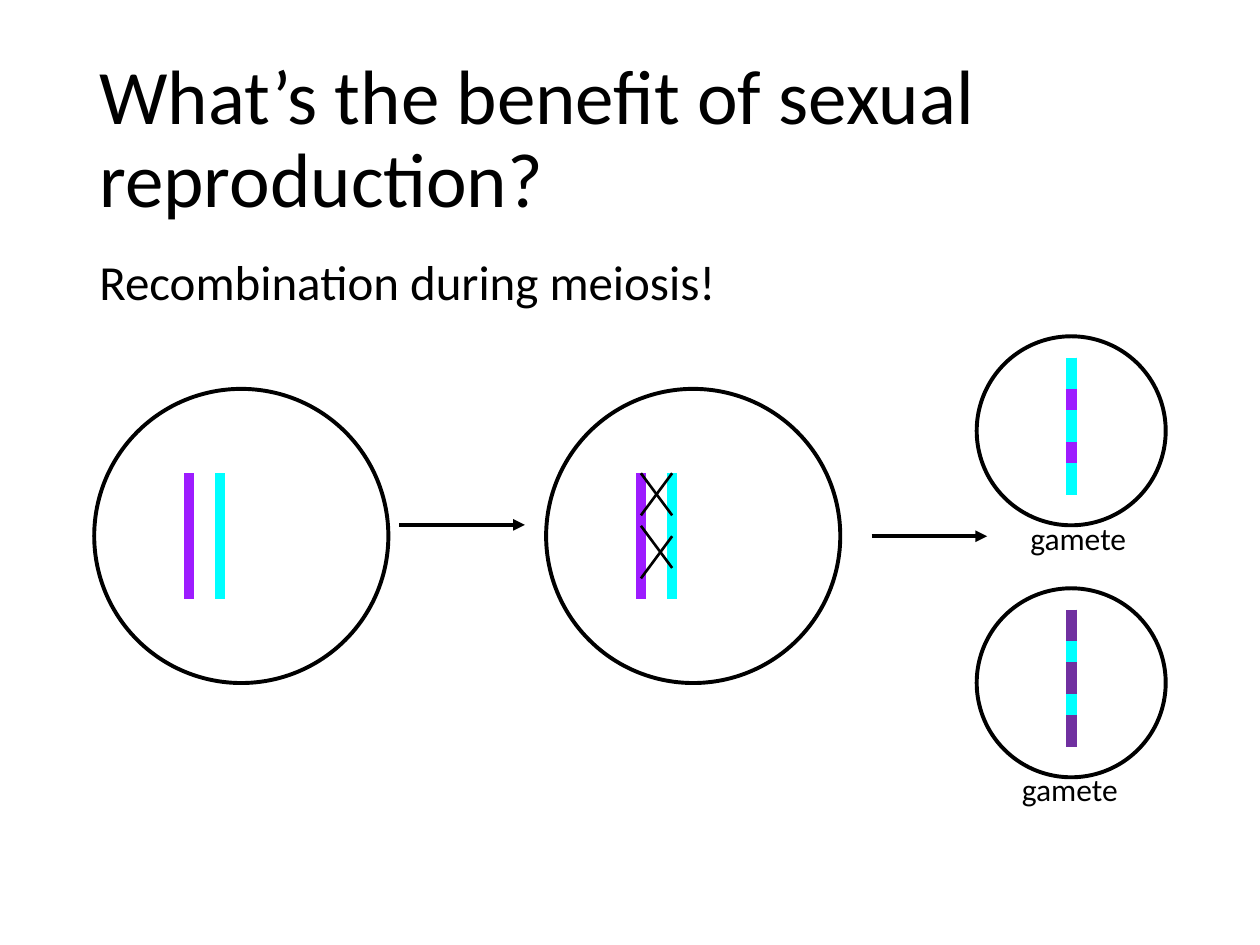
from dataclasses import dataclass

from lxml import etree
from pptx import Presentation
from pptx.dml.color import RGBColor
from pptx.enum.shapes import MSO_CONNECTOR, MSO_SHAPE
from pptx.enum.text import MSO_ANCHOR, MSO_AUTO_SIZE, PP_ALIGN
from pptx.oxml.ns import qn
from pptx.util import Cm, Pt

STRAIGHT = MSO_CONNECTOR.STRAIGHT
OVAL = MSO_SHAPE.OVAL
LEFT = PP_ALIGN.LEFT
TOP, MIDDLE = MSO_ANCHOR.TOP, MSO_ANCHOR.MIDDLE
FIT_SHAPE = MSO_AUTO_SIZE.SHAPE_TO_FIT_TEXT


@dataclass(frozen=True)
class Theme:
    font: str = "Calibri"
    ink: str = "000000"
    violet: str = "9D1CFF"
    plum: str = "7030A0"
    cyan: str = "00FFFF"
    title_size: float = 44
    body_size: float = 28
    label_size: float = 18
    outline: float = 2.25
    strand: float = 6
    crossing: float = 1.5


def write_text(frame, text, *, theme, size, line_spacing=None, space_before=None):
    """Put one formatted paragraph in a text frame and return it."""
    para = frame.paragraphs[0]
    para.alignment = LEFT
    para.line_spacing = line_spacing
    if space_before is not None:
        para.space_before = Pt(space_before)
    span = para.add_run()
    span.text = text
    span.font.name = theme.font
    span.font.size = Pt(size)
    span.font.color.rgb = RGBColor.from_string(theme.ink)
    return para


class Page:
    """Draws the elements of one slide; all lengths are in centimetres."""

    def __init__(self, slide, theme):
        self.slide = slide
        self.theme = theme

    def placeholder(self, index, text, bounds, size, anchor, space_before=0):
        box = self.slide.placeholders[index]
        box.left, box.top, box.width, box.height = map(Cm, bounds)
        box.text_frame.vertical_anchor = anchor
        para = write_text(box.text_frame, text, theme=self.theme, size=size,
                          line_spacing=0.9, space_before=space_before)
        # Plain paragraph without bullet or hanging indent
        properties = para._p.get_or_add_pPr()
        properties.set("marL", "0")
        properties.set("indent", "0")
        etree.SubElement(properties, qn("a:buNone"))

    def label(self, text, left, top):
        box = self.slide.shapes.add_textbox(Cm(left), Cm(top), Cm(2.46), Cm(1.02))
        box.text_frame.word_wrap = False
        box.text_frame.auto_size = FIT_SHAPE
        write_text(box.text_frame, text, theme=self.theme, size=self.theme.label_size)

    def circle(self, left, top, diameter):
        shape = self.slide.shapes.add_shape(
            OVAL, Cm(left), Cm(top), Cm(diameter), Cm(diameter))
        shape.shadow.inherit = False
        shape.fill.background()
        shape.line.color.rgb = RGBColor.from_string(self.theme.ink)
        shape.line.width = Pt(self.theme.outline)

    def line(self, start, end, color, width, arrow=False, group=None):
        shapes = group.shapes if group else self.slide.shapes
        line = shapes.add_connector(STRAIGHT, *map(Cm, (*start, *end)))
        line.line.color.rgb = RGBColor.from_string(color)
        line.line.width = Pt(width)
        if arrow:
            etree.SubElement(line.line._get_or_add_ln(), qn("a:tailEnd"), type="triangle")
        etree.SubElement(line._element.spPr, qn("a:effectLst"))

    def arrow(self, left, right, top):
        self.line((left, top), (right, top), self.theme.ink, self.theme.outline, arrow=True)

    def strand(self, left, top, length, color, group=None):
        self.line((left, top), (left, top + length), color, self.theme.strand, group=group)

    def parent_cell(self, left, top, crossings=()):
        """Cell with a chromosome pair; crossings are falling and rising offsets."""
        self.circle(left, top, 5.93)
        first, second, strand_top = left + 1.91, left + 2.54, top + 1.7
        self.strand(first, strand_top, 2.54, self.theme.violet)
        self.strand(second, strand_top, 2.54, self.theme.cyan)
        for start, end in crossings:
            self.line((first, strand_top + start), (second, strand_top + end),
                      self.theme.ink, self.theme.crossing)

    def gamete(self, left, top, base, swapped):
        """Cell with one recombined chromosome: a base strand and three segments."""
        self.circle(left, top, 3.81)
        group = self.slide.shapes.add_group_shape()
        middle, strand_top = left + 3.81 / 2, top + 0.43
        self.strand(middle, strand_top, 2.54, base, group)
        for number in range(3):
            self.strand(middle, strand_top + number * 1.06, 0.64, swapped, group)


def main():
    theme = Theme()
    deck = Presentation()
    deck.slide_width, deck.slide_height = Cm(25.4), Cm(19.05)
    page = Page(deck.slides.add_slide(deck.slide_layouts[1]), theme)

    # Title and statement
    page.placeholder(0, "What’s the benefit of sexual reproduction?",
                     (1.75, 1.01, 21.9, 3.68), theme.title_size, MIDDLE)
    page.placeholder(1, "Recombination during meiosis!",
                     (1.75, 5.07, 21.9, 12.09), theme.body_size, TOP, space_before=10)

    # Parent cell, then the same cell with crossing over
    page.parent_cell(1.9, 7.84)
    page.parent_cell(11.01, 7.84, crossings=(
        (0, 0.85), (1.06, 1.91), (0.85, 0), (2.12, 1.27)))

    # Steps between the stages
    page.arrow(8.05, 10.58, 10.58)
    page.arrow(17.57, 19.9, 10.81)

    # Resulting gametes
    page.gamete(19.69, 6.78, theme.violet, theme.cyan)
    page.gamete(19.69, 11.86, theme.cyan, theme.plum)
    page.label("gamete", 20.52, 10.34)
    page.label("gamete", 20.35, 15.39)

    deck.save("out.pptx")


if __name__ == "__main__":
    main()
